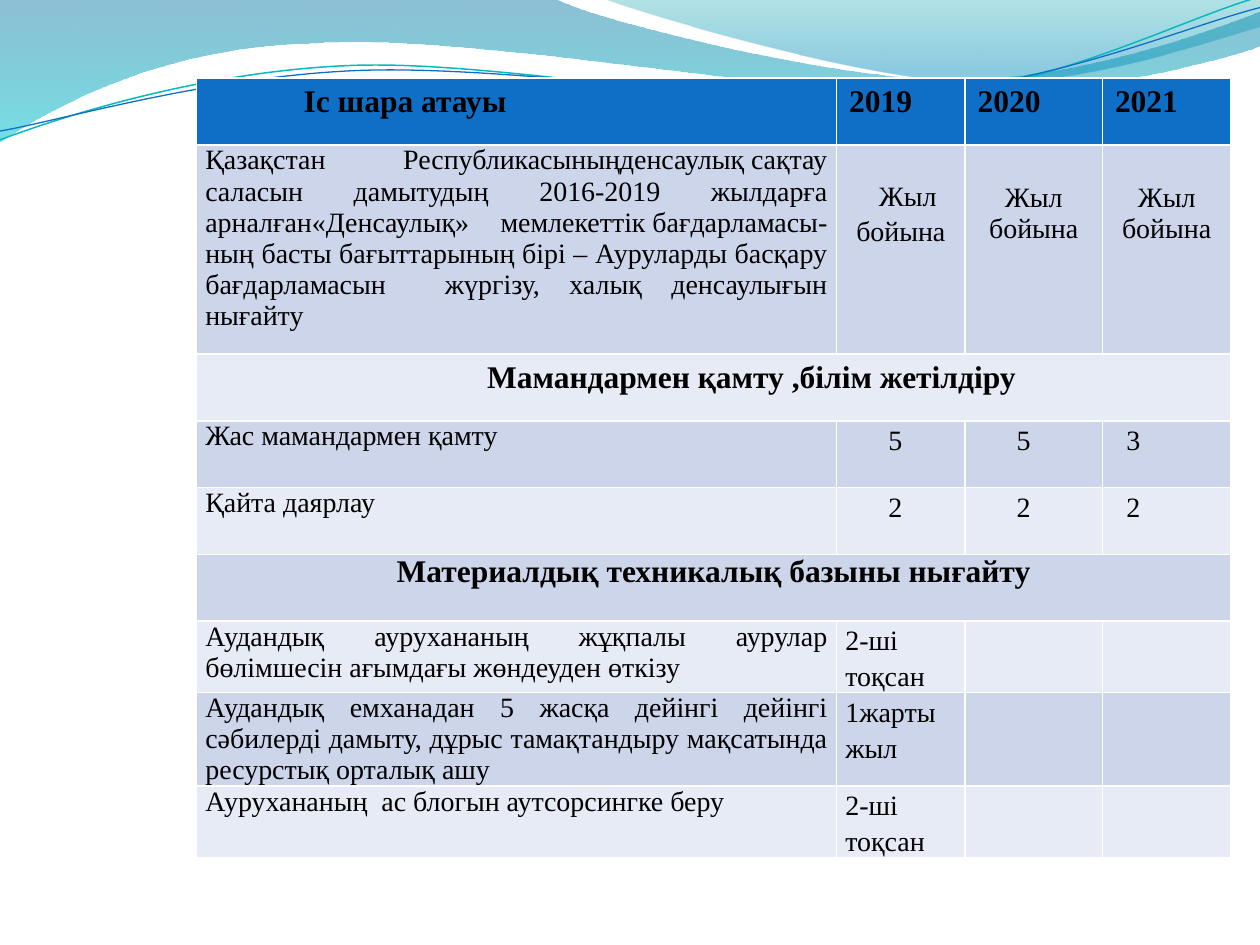
import math
from lxml import etree
from pptx import Presentation, util as u
from pptx.dml.color import RGBColor
from pptx.enum.text import PP_ALIGN
from pptx.oxml.ns import qn

COLORS = dict(black="000000", header="0F6FC6", dark="CCD5EA", light="E7EBF5",
              teal="0AB8BF", blue="0F6FC6", sea="0074A1", aqua="00C6CF",
              lagoon="00A1A9", sky="008BBF")

LEFT, TOP, TABLE_HEIGHT = 1.56, 0.62, 6.32
COLUMNS = [5.08, 1.02, 1.09, 1.02]
ROWS = [0.53, 1.66] + [0.53] * 7
NBSP = chr(160)

BANNER = dict(size=18, bold=True)
HEAD = dict(BANNER, margins=(0.1, 0.05), align=PP_ALIGN.LEFT)
NOTE = dict(spacing=1.15)
COUNT = dict(spacing=1.15, margins=(0.41, 0))
LAST_COUNT = dict(spacing=1.15, margins=(0.19, 0))
ALL_YEAR = dict(margins=(0.1, 0.3), align=PP_ALIGN.CENTER)
FIRST_YEAR = dict(margins=(0.07, 0.25), align=PP_ALIGN.CENTER, spacing=1.15, indent=0.11)

PLAN = [
    [("Іс шара атауы", dict(HEAD, margins=(0.85, 0.05))),
     ("2019", HEAD), ("2020", HEAD), ("2021", HEAD)],
    [(f"Қазақстан Республикасыныңденсаулық{NBSP}сақтау саласын дамытудың 2016-2019 жылдарға "
      f"арналған«Денсаулық» мемлекеттік{NBSP}бағдарламасы-ның басты бағыттарының бірі – "
      "Ауруларды басқару бағдарламасын  жүргізу, халық денсаулығын нығайту", {}),
     ("Жыл бойына", FIRST_YEAR), ("Жыл бойына", ALL_YEAR), ("Жыл бойына", ALL_YEAR)],
    [("Мамандармен қамту ,білім жетілдіру",
      dict(BANNER, margins=(0.7, 0.05), align=PP_ALIGN.CENTER))],
    [("Жас мамандармен қамту", {}), ("5", COUNT), ("5", COUNT), ("3", LAST_COUNT)],
    [("Қайта даярлау", {}), ("2", COUNT), ("2", COUNT), ("2", LAST_COUNT)],
    [("Материалдық техникалық базыны нығайту", dict(BANNER, align=PP_ALIGN.CENTER))],
    [("Аудандық аурухананың жұқпалы аурулар бөлімшесін ағымдағы жөндеуден өткізу", {}),
     ("2-ші тоқсан", NOTE), None, None],
    [("Аудандық емханадан 5 жасқа дейінгі дейінгі сәбилерді дамыту, дұрыс тамақтандыру "
      "мақсатында ресурстық орталық ашу", {}),
     ("1жарты жыл", NOTE), None, None],
    [("Аурухананың  ас блогын аутсорсингке беру", {}),
     ("2-ші тоқсан", NOTE), None, None],
]

BANDS = [
    ([(0, 0), (4.4, -0.01), (4.76, 0.17, 6.64, 0.63, 7.58, 0.63),
      (8.53, 0.63, 9.58, 0.26, 10, 0.09), (10.01, 0.36),
      (9.83, 0.44, 8.7, 0.76, 7.46, 0.75), (6.22, 0.75, 3.82, 0.28, 2.57, 0.34),
      (1.29, 0.36, 0.46, 0.83, -0.01, 1.13), (0, 0)],
     [("sea", 0, 45), ("aqua", 1, 55)]),
    ([(4.79, -0.01), (5.09, 0.11, 6.82, 0.62, 7.69, 0.65),
      (8.56, 0.69, 9.61, 0.32, 10, 0.21), (10, 0), (4.79, -0.01)],
     [("lagoon", 0, 30), ("sky", 0.8, 45)]),
]
STRANDS = [
    ([(0, 1.11), (0.48, 0.93, 1.58, 0.57, 2.77, 0.52),
      (3.95, 0.47, 5.93, 0.89, 7.13, 0.8), (8.33, 0.71, 9.38, 0.15, 9.98, -0.02)],
     (4.99, 0.575), "teal", 0.85),
    ([(0, 1.04), (0.47, 0.96, 1.64, 0.61, 2.83, 0.56),
      (4.03, 0.51, 5.97, 0.84, 7.17, 0.75), (8.36, 0.67, 9.41, 0.21, 10, 0.06)],
     (4.995, 0.59), "blue", 0.75),
]
TILT = 2.7


def rgb(name):
    return RGBColor.from_string(COLORS[name])


def turn(leg, center):
    cos, sin = math.cos(math.radians(TILT)), math.sin(math.radians(TILT))
    turned = []
    for x, y in zip(leg[::2], leg[1::2]):
        dx, dy = x - center[0], y - center[1]
        turned += [center[0] + dx * cos - dy * sin, center[1] + dx * sin + dy * cos]
    return tuple(turned)


def draw(shapes, route, close):
    points = [(u.Inches(x), u.Inches(y))
              for leg in route for x, y in zip(leg[::2], leg[1::2])]
    builder = shapes.build_freeform(*points[0])
    builder.add_line_segments(points[1:], close=close)
    wave = builder.convert_to_shape()
    wave.shadow.inherit = False
    segments = iter(list(wave.element.iter(qn("a:lnTo"))))
    for leg in route[1:]:
        first = next(segments)
        if len(leg) == 6:
            curve = etree.Element(qn("a:cubicBezTo"))
            first.addprevious(curve)
            for segment in (first, next(segments), next(segments)):
                curve.append(segment[0])
                segment.getparent().remove(segment)
    return wave


def add_band(slide, route, stops):
    band = draw(slide.shapes, route, True)
    band.line.fill.background()
    band.fill.gradient()
    band.fill.gradient_angle = 270
    for stop, (color, position, _) in zip(band.fill.gradient_stops, stops):
        stop.color.rgb = rgb(color)
        stop.position = position
    for tint, (_, _, opacity) in zip(band.element.iter(qn("a:srgbClr")), stops):
        etree.SubElement(tint, qn("a:alpha")).set("val", str(opacity * 1000))


def add_strand(group, route, center, color, width):
    strand = draw(group.shapes, [turn(leg, center) for leg in route], False)
    strand.rotation = 360 - TILT
    strand.fill.background()
    strand.line.color.rgb = rgb(color)
    strand.line.width = u.Pt(width)


def write(cell, words, size=16, bold=False, align=PP_ALIGN.JUSTIFY, spacing=None,
          margins=(0.07, 0), indent=None):
    left, top = margins
    cell.margin_left, cell.margin_top = u.Inches(left), u.Inches(top)
    cell.margin_right, cell.margin_bottom = u.Inches(min(left, 0.1)), 0
    line = cell.text_frame.paragraphs[0]
    line.alignment = align
    if spacing:
        line.line_spacing = spacing
    if indent:
        line._p.get_or_add_pPr().set("indent", str(u.Inches(indent)))
    run = line.add_run()
    run.text = words
    run.font.name = "Times New Roman"
    run.font.size = u.Pt(size)
    run.font.bold = bold
    run.font.color.rgb = rgb("black")


def add_plan(slide):
    frame = slide.shapes.add_table(
        len(ROWS), len(COLUMNS), u.Inches(LEFT), u.Inches(TOP),
        u.Inches(sum(COLUMNS)), u.Inches(TABLE_HEIGHT))
    plan = frame.table
    for column, width in zip(plan.columns, COLUMNS):
        column.width = u.Inches(width)
    for index, (height, entries) in enumerate(zip(ROWS, PLAN)):
        plan.rows[index].height = u.Inches(height)
        shade = "header" if index == 0 else ("light", "dark")[index % 2]
        for cell in plan.rows[index].cells:
            cell.fill.solid()
            cell.fill.fore_color.rgb = rgb(shade)
        if len(entries) == 1:
            plan.cell(index, 0).merge(plan.cell(index, len(COLUMNS) - 1))
        for column, entry in enumerate(entries):
            if entry:
                words, style = entry
                write(plan.cell(index, column), words, **style)
    frame.height = u.Inches(TABLE_HEIGHT)


def main():
    deck = Presentation()
    deck.slide_width, deck.slide_height = u.Inches(10), u.Inches(7.5)
    slide = deck.slides.add_slide(deck.slide_layouts[6])
    for band in BANDS:
        add_band(slide, *band)
    strands = slide.shapes.add_group_shape()
    for strand in STRANDS:
        add_strand(strands, *strand)
    add_plan(slide)
    deck.save("out.pptx")


if __name__ == "__main__":
    main()
